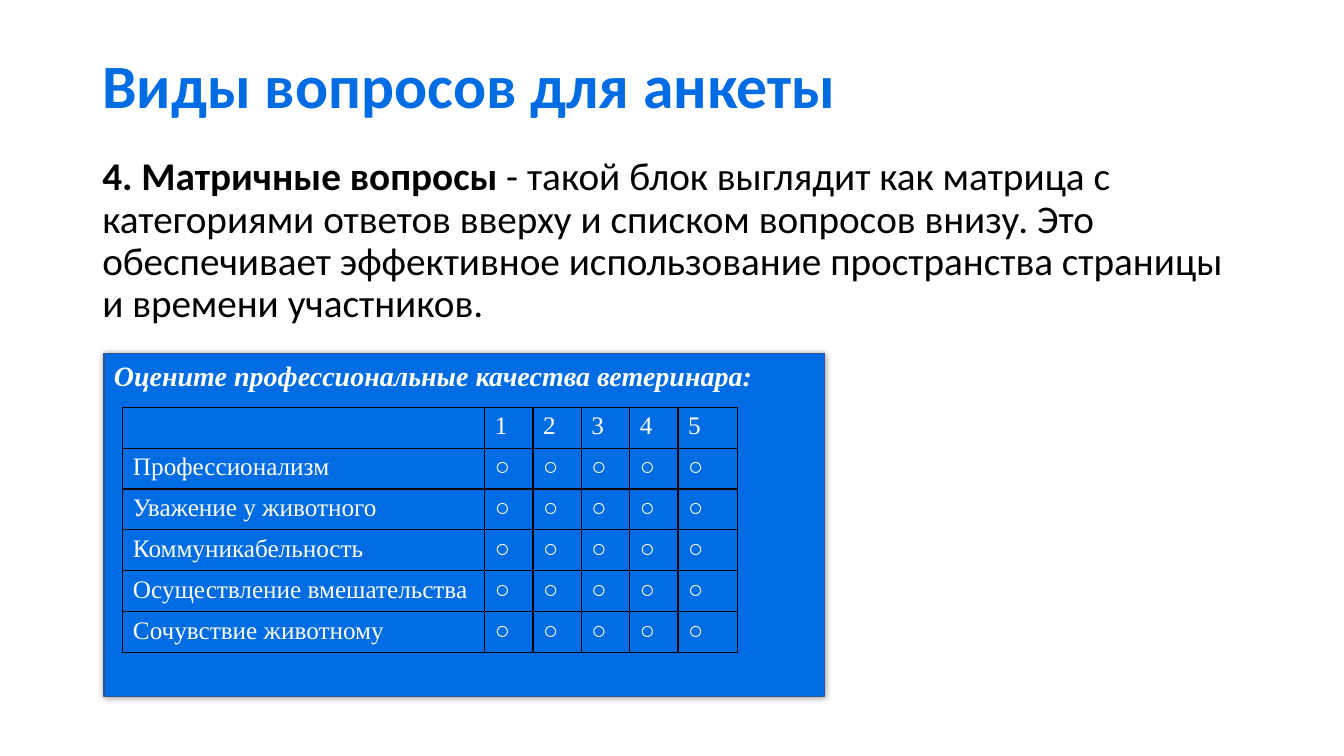
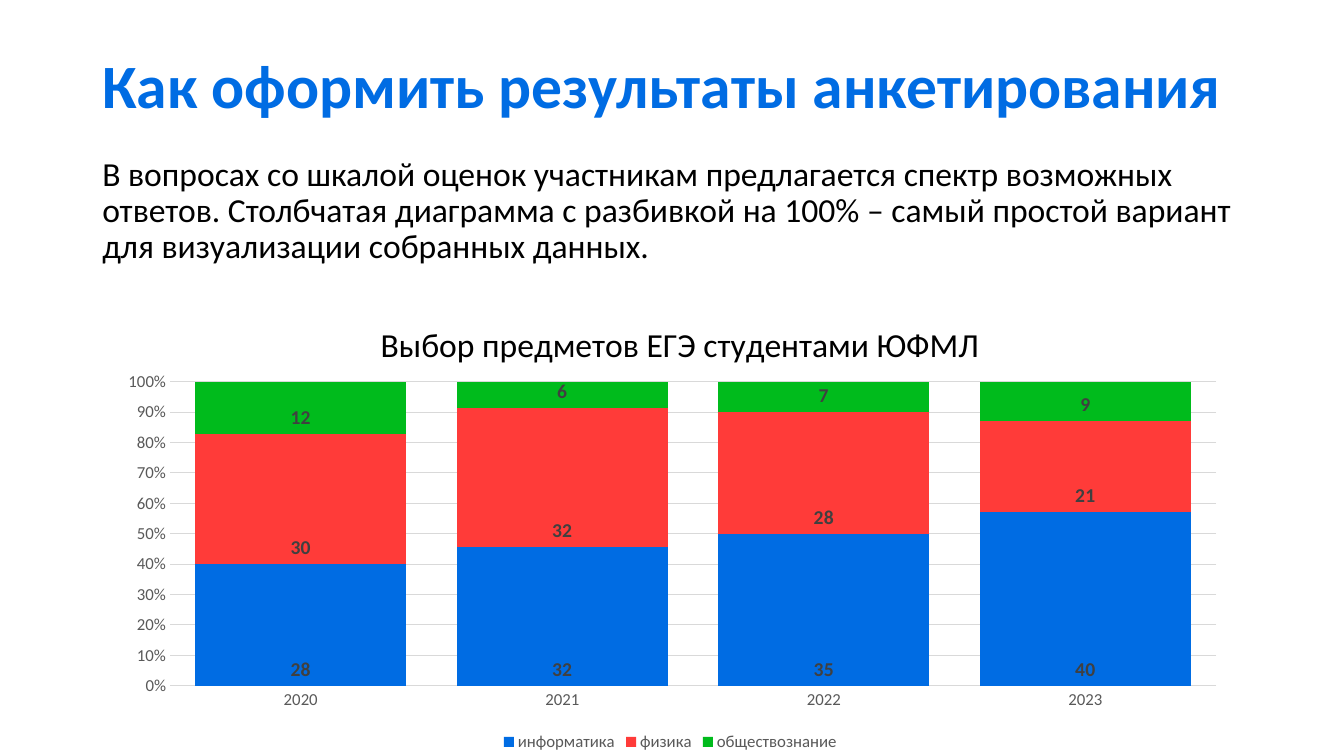
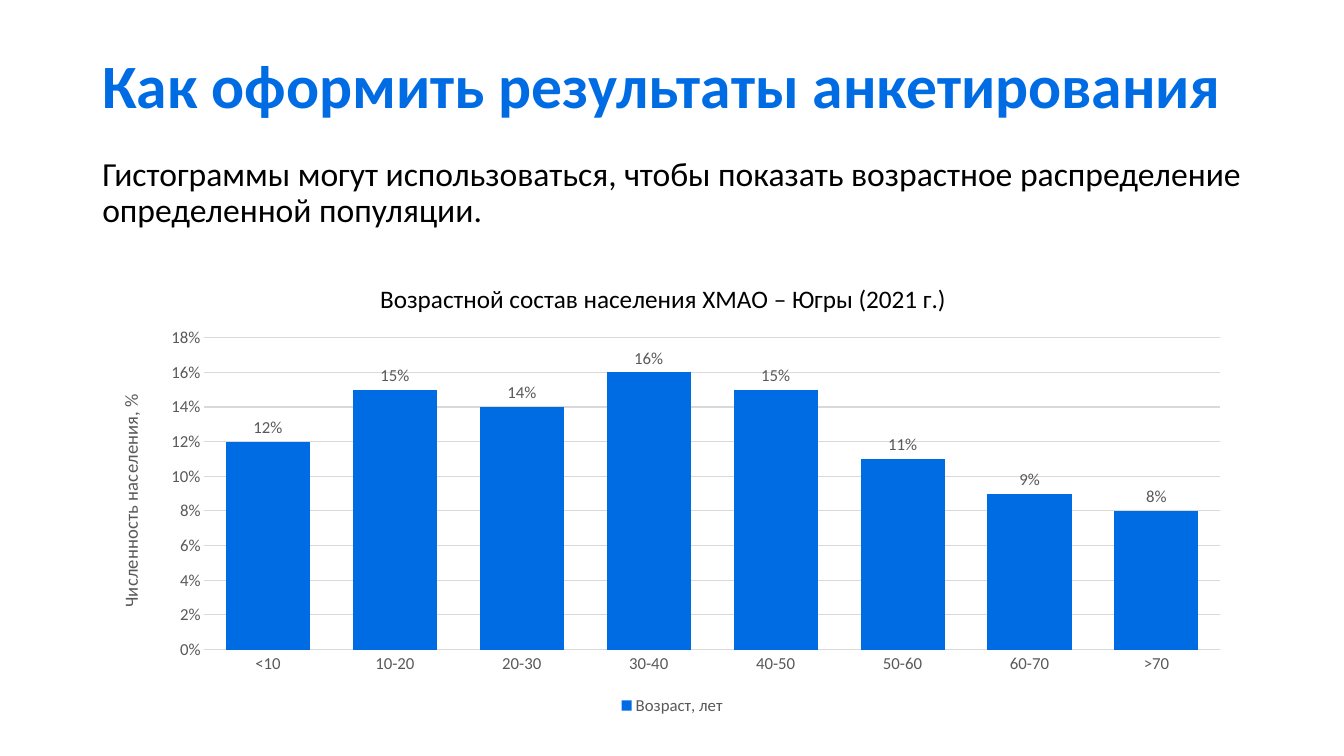
import lxml.etree
import pptx
import pptx.chart.data
import pptx.dml.color
import pptx.enum.chart
import pptx.enum.shapes
import pptx.enum.text
import pptx.oxml.ns
import pptx.util

Pt = pptx.util.Pt
qn = pptx.oxml.ns.qn
CHART = pptx.enum.chart

COLORS = {
    "blue": "006CE3",
    "red": "FF3B39",
    "green": "00BB1C",
    "outline": "325491",
    "black": "000000",
    "white": "FFFFFF",
    "axis": "595959",
    "label": "404040",
    "grid": "D9D9D9",
}
SANS = "Calibri"
SERIF = "Times New Roman"
LEFT, WIDTH = 66, 828
RESULTS_TITLE = "Как оформить результаты анкетирования"


def rgb(name):
    return pptx.dml.color.RGBColor.from_string(COLORS[name])


def format_font(font, size, color, name=SANS, bold=False, italic=False):
    font.size = Pt(size)
    font.name = name
    font.bold = bold
    font.italic = italic
    font.color.rgb = rgb(color)


def add_run(paragraph, text, size, color, **style):
    run = paragraph.add_run()
    run.text = text
    format_font(run.font, size, color, **style)


def place(shape, left, top, width, height):
    shape.left, shape.top = Pt(left), Pt(top)
    shape.width, shape.height = Pt(width), Pt(height)


def prepare_frame(shape, anchor):
    frame = shape.text_frame
    frame.word_wrap = True
    frame.auto_size = pptx.enum.text.MSO_AUTO_SIZE.NONE
    frame.vertical_anchor = anchor
    paragraph = frame.paragraphs[0]
    paragraph.alignment = pptx.enum.text.PP_ALIGN.LEFT
    return paragraph


def add_titled_slide(presentation, title):
    slide = presentation.slides.add_slide(presentation.slide_layouts[5])
    shape = slide.shapes.title
    place(shape, LEFT, 28.8, WIDTH, 68.4)
    paragraph = prepare_frame(shape, pptx.enum.text.MSO_ANCHOR.MIDDLE)
    paragraph.line_spacing = 0.9
    add_run(paragraph, title, 44, "blue", bold=True)
    return slide


def add_body(slide, size, text, lead=""):
    shape = slide.shapes.add_textbox(Pt(LEFT), Pt(108.6), Pt(WIDTH), Pt(377))
    paragraph = prepare_frame(shape, pptx.enum.text.MSO_ANCHOR.TOP)
    paragraph.line_spacing = 0.9
    paragraph.space_before = Pt(10)
    if lead:
        add_run(paragraph, lead, size, "black", bold=True)
    add_run(paragraph, text, size, "black")


def add_shadow(shape, color, opacity, blur):
    shape.shadow.inherit = False
    effects = shape.element.spPr.find(qn("a:effectLst"))
    shadow = lxml.etree.SubElement(
        effects, qn("a:outerShdw"), blurRad=str(Pt(blur)), dist="0", dir="0",
        algn="ctr", rotWithShape="0")
    tone = lxml.etree.SubElement(shadow, qn("a:srgbClr"), val=COLORS[color])
    lxml.etree.SubElement(tone, qn("a:alpha"), val=str(opacity * 1000))


def add_panel(slide, text):
    shape = slide.shapes.add_shape(
        pptx.enum.shapes.MSO_SHAPE.RECTANGLE, Pt(74.2), Pt(252.7), Pt(514.8), Pt(244.8))
    shape.fill.solid()
    shape.fill.fore_color.rgb = rgb("blue")
    shape.line.color.rgb = rgb("outline")
    shape.line.width = Pt(1)
    add_shadow(shape, "black", 40, 5)
    paragraph = prepare_frame(shape, pptx.enum.text.MSO_ANCHOR.TOP)
    add_run(paragraph, text, 20, "white", name=SERIF, bold=True, italic=True)


def add_borders(cell, color, width):
    properties = cell._tc.get_or_add_tcPr()
    for side in ("lnL", "lnR", "lnT", "lnB"):
        line = lxml.etree.SubElement(properties, qn("a:" + side), w=str(Pt(width)))
        fill = lxml.etree.SubElement(line, qn("a:solidFill"))
        lxml.etree.SubElement(fill, qn("a:srgbClr"), val=COLORS[color])


def add_rating_table(slide, qualities, scores):
    rows = [["", *scores]] + [[quality] + ["○"] * len(scores) for quality in qualities]
    widths = [258.5] + [34.5] * (len(scores) - 1) + [42.5]
    row_height = 29.2
    table = slide.shapes.add_table(
        len(rows), len(widths), Pt(87.8), Pt(290.9),
        Pt(sum(widths)), Pt(row_height * len(rows))).table
    table.first_row = False
    table.horz_banding = False
    for column, width in zip(table.columns, widths):
        column.width = Pt(width)
    for row, texts in zip(table.rows, rows):
        row.height = Pt(row_height)
        for cell, text in zip(row.cells, texts):
            add_borders(cell, "black", 1)
            cell.fill.background()
            if text:
                add_run(cell.text_frame.paragraphs[0], text, 18, "white", name=SERIF)


def set_layout(element, index, **values):
    for old in element.findall(qn("c:layout")):
        element.remove(old)
    layout = lxml.etree.Element(qn("c:layout"))
    manual = lxml.etree.SubElement(layout, qn("c:manualLayout"))
    if "w" in values:
        lxml.etree.SubElement(manual, qn("c:layoutTarget"), val="inner")
    for key in ("x", "y"):
        lxml.etree.SubElement(manual, qn("c:" + key + "Mode"), val="edge")
    for key, value in values.items():
        lxml.etree.SubElement(manual, qn("c:" + key), val=str(value))
    element.insert(index, layout)


def format_axis(axis):
    axis.major_tick_mark = CHART.XL_TICK_MARK.NONE
    axis.minor_tick_mark = CHART.XL_TICK_MARK.NONE
    format_font(axis.tick_labels.font, 12, "axis")
    axis.format.line.fill.background()


def format_value_axis(axis, maximum, step):
    format_axis(axis)
    axis.minimum_scale = 0
    axis.maximum_scale = maximum
    axis.major_unit = step
    axis.tick_labels.number_format = "0%"
    axis.tick_labels.number_format_is_linked = False
    axis.has_major_gridlines = True
    axis.major_gridlines.format.line.color.rgb = rgb("grid")
    axis.major_gridlines.format.line.width = Pt(0.75)


def add_column_chart(slide, kind, box, categories, series, title, title_size,
                     title_place, plot_place, gap, scale):
    data = pptx.chart.data.CategoryChartData()
    data.categories = categories
    for name, values, _ in series:
        data.add_series(name, values)
    chart = slide.shapes.add_chart(kind, *[Pt(length) for length in box], data).chart
    format_font(chart.font, 10, "black")
    chart.has_title = True
    add_run(chart.chart_title.text_frame.paragraphs[0], title, title_size, "black")
    set_layout(chart.chart_title.element, 1, **title_place)
    set_layout(chart.element.find(".//" + qn("c:plotArea")), 0, **plot_place)
    chart.has_legend = True
    chart.legend.position = CHART.XL_LEGEND_POSITION.BOTTOM
    chart.legend.include_in_layout = False
    format_font(chart.legend.font, 12, "axis")
    format_axis(chart.category_axis)
    format_value_axis(chart.value_axis, *scale)
    plot = chart.plots[0]
    plot.gap_width = gap
    plot.vary_by_categories = False
    for item, (_, _, color) in zip(plot.series, series):
        item.format.fill.solid()
        item.format.fill.fore_color.rgb = rgb(color)
        item.invert_if_negative = False
    return chart


def add_labels(chart, position, size, color, number_format, bold=False):
    for item in chart.plots[0].series:
        labels = item.data_labels
        labels.show_value = True
        labels.position = position
        labels.number_format = number_format
        labels.number_format_is_linked = False
        format_font(labels.font, size, color, bold=bold)


def add_matrix_slide(presentation):
    slide = add_titled_slide(presentation, "Виды вопросов для анкеты")
    add_body(
        slide, 28,
        " - такой блок выглядит как матрица с категориями ответов вверху и списком "
        "вопросов внизу. Это обеспечивает эффективное использование пространства "
        "страницы и времени участников.",
        lead="4. Матричные вопросы")
    add_panel(slide, "Оцените профессиональные качества ветеринара:")
    add_rating_table(
        slide,
        ["Профессионализм", "Уважение у животного", "Коммуникабельность",
         "Осуществление вмешательства", "Сочувствие животному"],
        ["1", "2", "3", "4", "5"])


def add_subjects_slide(presentation):
    slide = add_titled_slide(presentation, RESULTS_TITLE)
    add_body(
        slide, 24,
        "В вопросах со шкалой оценок участникам предлагается спектр возможных ответов. "
        "Столбчатая диаграмма с разбивкой на 100% – самый простой вариант для "
        "визуализации собранных данных.")
    chart = add_column_chart(
        slide, CHART.XL_CHART_TYPE.COLUMN_STACKED_100, (72.7, 205.9, 812.2, 334.1),
        ["2020", "2021", "2022", "2023"],
        [("информатика", [28, 32, 35, 40], "blue"),
         ("физика", [30, 32, 28, 21], "red"),
         ("обществознание", [12, 6, 7, 9], "green")],
        "Выбор предметов ЕГЭ студентами ЮФМЛ", 24,
        {"x": 0.24, "y": 0.06}, {"x": 0.06, "y": 0.2, "w": 0.92, "h": 0.65},
        24, (1, 0.1))
    chart.plots[0].overlap = 100
    axis_line = chart.category_axis.format.line
    axis_line.color.rgb = rgb("grid")
    axis_line.width = Pt(0.75)
    add_labels(chart, CHART.XL_LABEL_POSITION.INSIDE_BASE, 14, "label", "General", bold=True)


def add_ages_slide(presentation):
    slide = add_titled_slide(presentation, RESULTS_TITLE)
    add_body(
        slide, 24,
        "Гистограммы могут использоваться, чтобы показать возрастное распределение "
        "определенной популяции.")
    chart = add_column_chart(
        slide, CHART.XL_CHART_TYPE.COLUMN_CLUSTERED, (72.7, 181.4, 815, 332.6),
        ["<10", "10-20", "20-30", "30-40", "40-50", "50-60", "60-70", ">70"],
        [("Возраст, лет", [0.12, 0.15, 0.14, 0.16, 0.15, 0.11, 0.09, 0.08], "blue")],
        "Возрастной состав населения ХМАО – Югры (2021 г.)", 18,
        {"x": 0.24, "y": 0.05}, {"x": 0.09, "y": 0.18, "w": 0.89, "h": 0.67},
        51, (0.18, 0.02))
    axis_title = chart.value_axis.axis_title.text_frame
    add_run(axis_title.paragraphs[0], "Численность населения, %", 13.3, "axis")
    add_labels(chart, CHART.XL_LABEL_POSITION.OUTSIDE_END, 12, "axis", "0%")


def main():
    presentation = pptx.Presentation()
    presentation.slide_width = Pt(960)
    presentation.slide_height = Pt(540)
    add_matrix_slide(presentation)
    add_subjects_slide(presentation)
    add_ages_slide(presentation)
    presentation.save("out.pptx")


if __name__ == "__main__":
    main()
